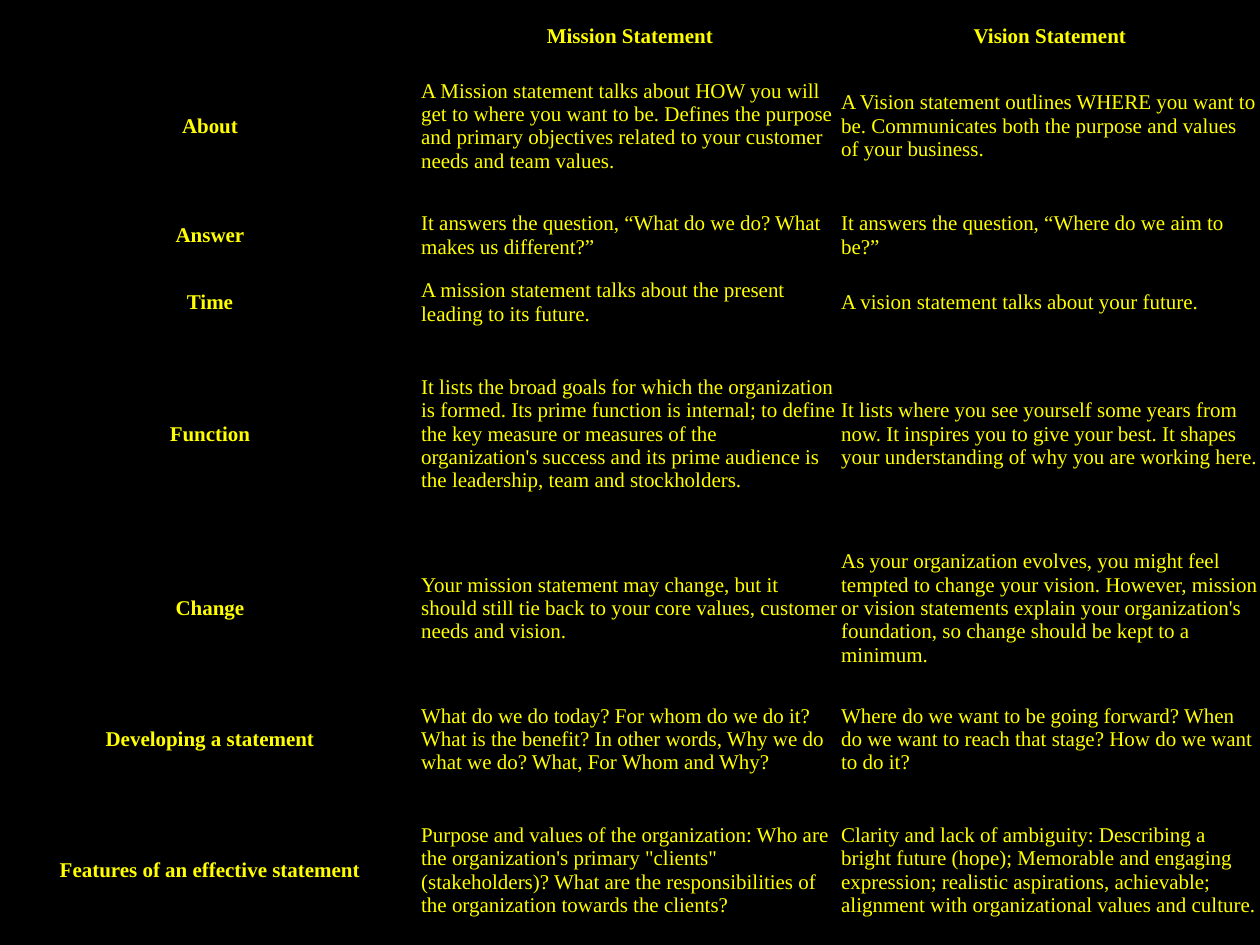
from lxml import etree
from pptx import Presentation
from pptx.dml.color import RGBColor
from pptx.enum.text import MSO_ANCHOR, PP_ALIGN
from pptx.oxml.ns import qn
from pptx.util import Inches, Pt

LEFT, CENTER = PP_ALIGN.LEFT, PP_ALIGN.CENTER
MIDDLE = MSO_ANCHOR.MIDDLE
WIDE, HIGH = Inches(10), Inches(7.5)
COLORS = {"back": "000000", "text": "FFFF00"}
FONT = "Times New Roman"
PLAIN = "{2D5ABB26-0587-4C30-8999-92F81FD0307C}"
ROWS = [0.19, 0.19, 1.21, 0.53, 0.53, 1.56, 1.21, 0.87, 1.21]
TEXTS = [
    ("", "", ""),
    ("", "Mission Statement", "Vision Statement"),
    ("About",
     "A Mission statement talks about HOW you will get to where you want to be. "
     "Defines the purpose and primary objectives related to your customer needs and team values.",
     "A Vision statement outlines WHERE you want to be. "
     "Communicates both the purpose and values of your business."),
    ("Answer",
     "It answers the question, “What do we do? What makes us different?”",
     "It answers the question, “Where do we aim to be?”"),
    ("Time",
     "A mission statement talks about the present leading to its future.",
     "A vision statement talks about your future."),
    ("Function",
     "It lists the broad goals for which the organization is formed. "
     "Its prime function is internal; to define the key measure or measures of the "
     "organization's success and its prime audience is the leadership, team and stockholders.",
     "It lists where you see yourself some years from now. It inspires you to give your best. "
     "It shapes your understanding of why you are working here."),
    ("Change",
     "Your mission statement may change, but it should still tie back to your core values, "
     "customer needs and vision.",
     "As your organization evolves, you might feel tempted to change your vision. "
     "However, mission or vision statements explain your organization's foundation, "
     "so change should be kept to a minimum."),
    ("Developing a statement",
     "What do we do today? For whom do we do it? What is the benefit? "
     "In other words, Why we do what we do? What, For Whom and Why?",
     "Where do we want to be going forward? When do we want to reach that stage? "
     "How do we want to do it?"),
    ("Features of an effective statement",
     "Purpose and values of the organization: Who are the organization's primary \"clients\" "
     "(stakeholders)? What are the responsibilities of the organization towards the clients?",
     "Clarity and lack of ambiguity: Describing a bright future (hope); "
     "Memorable and engaging expression; realistic aspirations, achievable; "
     "alignment with organizational values and culture."),
]


def color(name):
    return RGBColor.from_string(COLORS[name])


def write(cell, text, size=12, bold=False, align=LEFT):
    cell.fill.background()
    cell.vertical_anchor = MIDDLE
    cell.margin_left = cell.margin_right = Inches(0.01)
    cell.margin_top = cell.margin_bottom = Inches(0.01)
    para = cell.text_frame.paragraphs[0]
    para.alignment = align
    if not text:
        end = etree.SubElement(para._p, qn("a:endParaRPr"))
        end.set("sz", str(size * 50))
        return
    run = para.add_run()
    run.text = text
    font = run.font
    font.name, font.size, font.bold = FONT, Pt(size), bold
    font.color.rgb = color("text")


def add_grid(slide):
    cols = len(TEXTS[0])
    frame = slide.shapes.add_table(len(ROWS), cols, 0, 0, WIDE, HIGH)
    table = frame.table
    table.first_row = table.horz_banding = False
    table._tbl.tblPr.find(qn("a:tableStyleId")).text = PLAIN
    for col in table.columns:
        col.width = WIDE // cols
    for row, high in zip(table.rows, ROWS):
        row.height = Inches(high)
    for r, line in enumerate(TEXTS):
        for c, text in enumerate(line):
            head = r < 2 or c == 0
            write(table.cell(r, c), text, bold=head, align=CENTER if head else LEFT)
    table.cell(0, 0).merge(table.cell(0, cols - 1))


def main():
    deck = Presentation()
    deck.slide_width, deck.slide_height = WIDE, HIGH
    slide = deck.slides.add_slide(deck.slide_layouts[6])
    fill = slide.background.fill
    fill.solid()
    fill.fore_color.rgb = color("back")
    add_grid(slide)
    deck.save("out.pptx")


if __name__ == "__main__":
    main()
